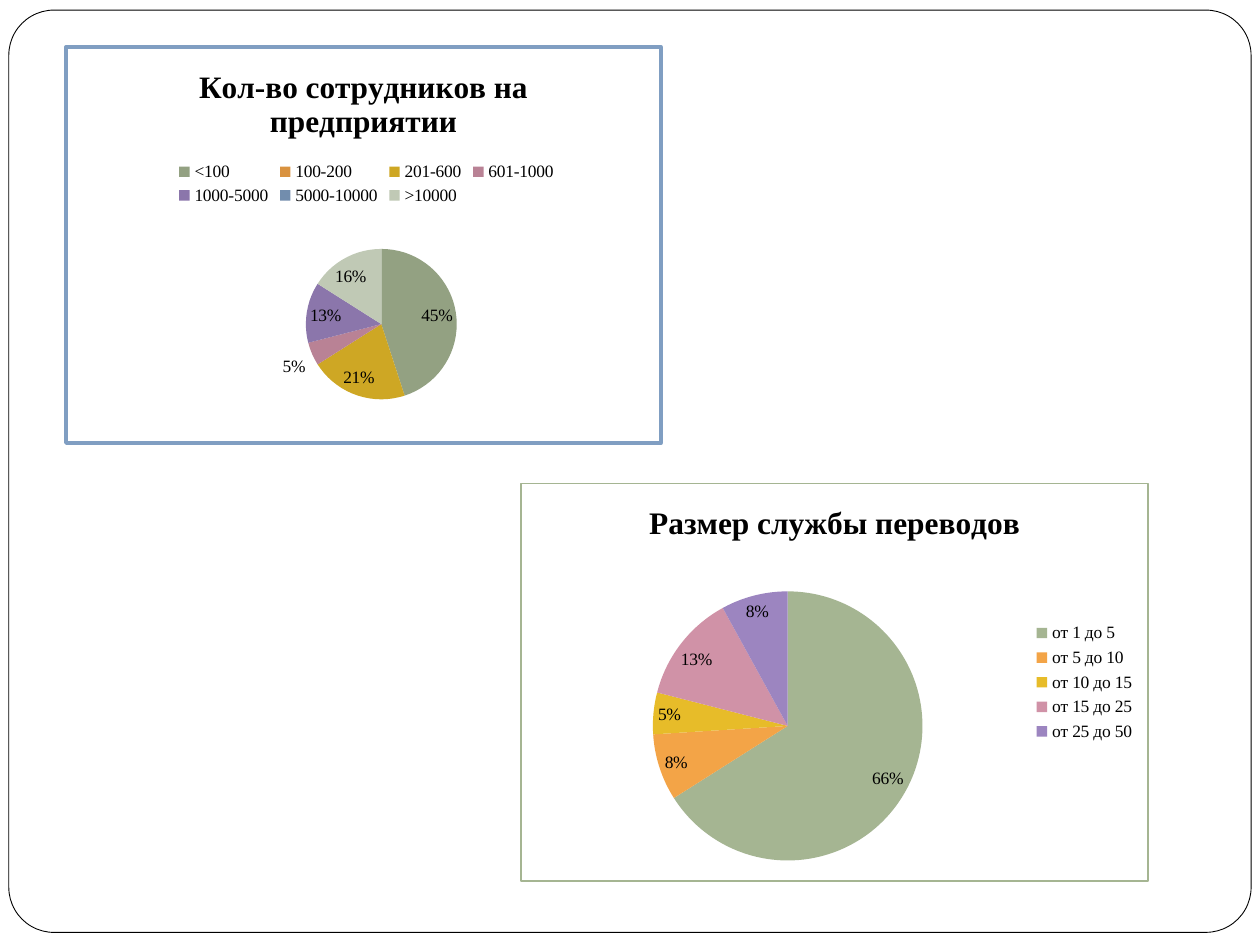
import pptx
import pptx.chart.data
import pptx.dml.color
import pptx.enum.chart
import pptx.enum.shapes
import pptx.oxml
import pptx.oxml.ns
import pptx.util

Inches = pptx.util.Inches
Pt = pptx.util.Pt
RGBColor = pptx.dml.color.RGBColor
LegendPosition = pptx.enum.chart.XL_LEGEND_POSITION
qn = pptx.oxml.ns.qn

FONT = "Times New Roman"
BLACK = RGBColor(0x00, 0x00, 0x00)
WHITE = RGBColor(0xFF, 0xFF, 0xFF)
BLUE = RGBColor(0x80, 0x9E, 0xC2)
GREEN = RGBColor(0xA5, 0xB5, 0x92)
ORANGE = RGBColor(0xF3, 0xA4, 0x47)
YELLOW = RGBColor(0xE7, 0xBC, 0x29)
PINK = RGBColor(0xD0, 0x92, 0xA7)
PURPLE = RGBColor(0x9C, 0x85, 0xC0)
DARK_GREEN = RGBColor(0x93, 0xA1, 0x82)
DARK_ORANGE = RGBColor(0xD9, 0x92, 0x3F)
DARK_YELLOW = RGBColor(0xCE, 0xA7, 0x24)
DARK_PINK = RGBColor(0xB9, 0x82, 0x95)
DARK_PURPLE = RGBColor(0x8B, 0x76, 0xAB)
DARK_BLUE = RGBColor(0x72, 0x8D, 0xAD)
PALE_GREEN = RGBColor(0xC0, 0xC9, 0xB5)

STAFF_SLICES = [
    ("<100 ", 45, DARK_GREEN),
    ("100-200", 0, DARK_ORANGE),
    ("201-600", 21, DARK_YELLOW),
    ("601-1000", 5, DARK_PINK),
    ("1000-5000", 13, DARK_PURPLE),
    ("5000-10000", 0, DARK_BLUE),
    (">10000", 16, PALE_GREEN),
]
SERVICE_SLICES = [
    ("от 1 до 5", 66, GREEN),
    ("от 5 до 10", 8, ORANGE),
    ("от 10 до 15", 5, YELLOW),
    ("от 15 до 25", 13, PINK),
    ("от 25 до 50", 8, PURPLE),
]


def add_frame(slide):
    frame = slide.shapes.add_shape(
        pptx.enum.shapes.MSO_SHAPE.ROUNDED_RECTANGLE,
        Inches(0.07), Inches(0.08), Inches(9.86), Inches(7.32))
    frame.adjustments[0] = 0.049
    frame.shadow.inherit = False
    frame.fill.solid()
    frame.fill.fore_color.rgb = WHITE
    frame.line.color.rgb = BLACK
    frame.line.width = Pt(0.5)


def style_font(font, size, bold=False):
    font.name = FONT
    font.size = Pt(size)
    font.bold = bold
    font.color.rgb = BLACK


def layout_xml(left, top, width, height, inner=False):
    target = '<c:layoutTarget val="inner"/>' if inner else ""
    return pptx.oxml.parse_xml(
        f'<c:layout {pptx.oxml.ns.nsdecls("c")}><c:manualLayout>{target}'
        '<c:xMode val="edge"/><c:yMode val="edge"/>'
        f'<c:x val="{left}"/><c:y val="{top}"/>'
        f'<c:w val="{width}"/><c:h val="{height}"/>'
        '</c:manualLayout></c:layout>')


def place_plot(chart, area):
    plot_area = chart.element.find(".//" + qn("c:plotArea"))
    for layout in plot_area.findall(qn("c:layout")):
        plot_area.remove(layout)
    plot_area.insert(0, layout_xml(*area, inner=True))


def place_legend(chart, area):
    legend = chart.element.find(".//" + qn("c:legend"))
    for layout in legend.findall(qn("c:layout")):
        legend.remove(layout)
    legend.find(qn("c:legendPos")).addnext(layout_xml(*area))


def add_border(chart, color, width):
    chart.element.find(qn("c:chart")).addnext(pptx.oxml.parse_xml(
        f'<c:spPr {pptx.oxml.ns.nsdecls("c", "a")}>'
        f'<a:solidFill><a:srgbClr val="{WHITE}"/></a:solidFill>'
        f'<a:ln w="{Pt(width)}"><a:solidFill><a:srgbClr val="{color}"/>'
        '</a:solidFill></a:ln></c:spPr>'))


def add_percent_labels(plot, values):
    plot.has_data_labels = True
    labels = plot.data_labels
    labels.show_value = False
    labels.show_percentage = True
    labels.number_format = "0%"
    labels.number_format_is_linked = False
    labels.position = pptx.enum.chart.XL_LABEL_POSITION.BEST_FIT
    style_font(labels.font, 10)
    empty = [index for index, value in enumerate(values) if value == 0]
    label_list = plot._element.find(qn("c:dLbls"))
    for index in reversed(empty):
        label_list.insert(0, pptx.oxml.parse_xml(
            f'<c:dLbl {pptx.oxml.ns.nsdecls("c")}><c:idx val="{index}"/>'
            '<c:delete val="1"/></c:dLbl>'))
    plot.series[0]._element.find(qn("c:cat")).addprevious(label_list)


def add_pie(slide, box, title, slices, legend_position, plot_area):
    names, values, colors = zip(*slices)
    data = pptx.chart.data.CategoryChartData()
    data.categories = names
    data.add_series(title, values)
    chart = slide.shapes.add_chart(
        pptx.enum.chart.XL_CHART_TYPE.PIE, *map(Inches, box), data).chart
    style_font(chart.font, 10)
    chart.has_title = True
    chart.chart_title.include_in_layout = False
    chart.chart_title.text_frame.text = title
    para = chart.chart_title.text_frame.paragraphs[0]
    style_font(para.runs[0].font, 18, bold=True)
    chart.has_legend = True
    chart.legend.position = legend_position
    chart.legend.include_in_layout = False
    style_font(chart.legend.font, 10)
    plot = chart.plots[0]
    plot.vary_by_categories = True
    for index, color in enumerate(colors):
        fill = plot.series[0].points[index].format.fill
        fill.solid()
        fill.fore_color.rgb = color
    add_percent_labels(plot, values)
    place_plot(chart, plot_area)
    return chart


def main():
    deck = pptx.Presentation()
    deck.slide_width = Inches(10)
    deck.slide_height = Inches(7.5)
    slide = deck.slides.add_slide(deck.slide_layouts[6])
    add_frame(slide)
    staff = add_pie(
        slide, (0.51, 0.36, 4.75, 3.17), "Кол-во сотрудников на предприятии",
        STAFF_SLICES, LegendPosition.TOP, (0.4, 0.51, 0.26, 0.38))
    place_legend(staff, (0.18, 0.28, 0.65, 0.13))
    add_border(staff, BLUE, 2)
    service = add_pie(
        slide, (4.13, 3.83, 4.99, 3.17), "Размер службы переводов",
        SERVICE_SLICES, LegendPosition.RIGHT, (0.21, 0.27, 0.43, 0.68))
    add_border(service, GREEN, 1)
    deck.save("out.pptx")


if __name__ == "__main__":
    main()
